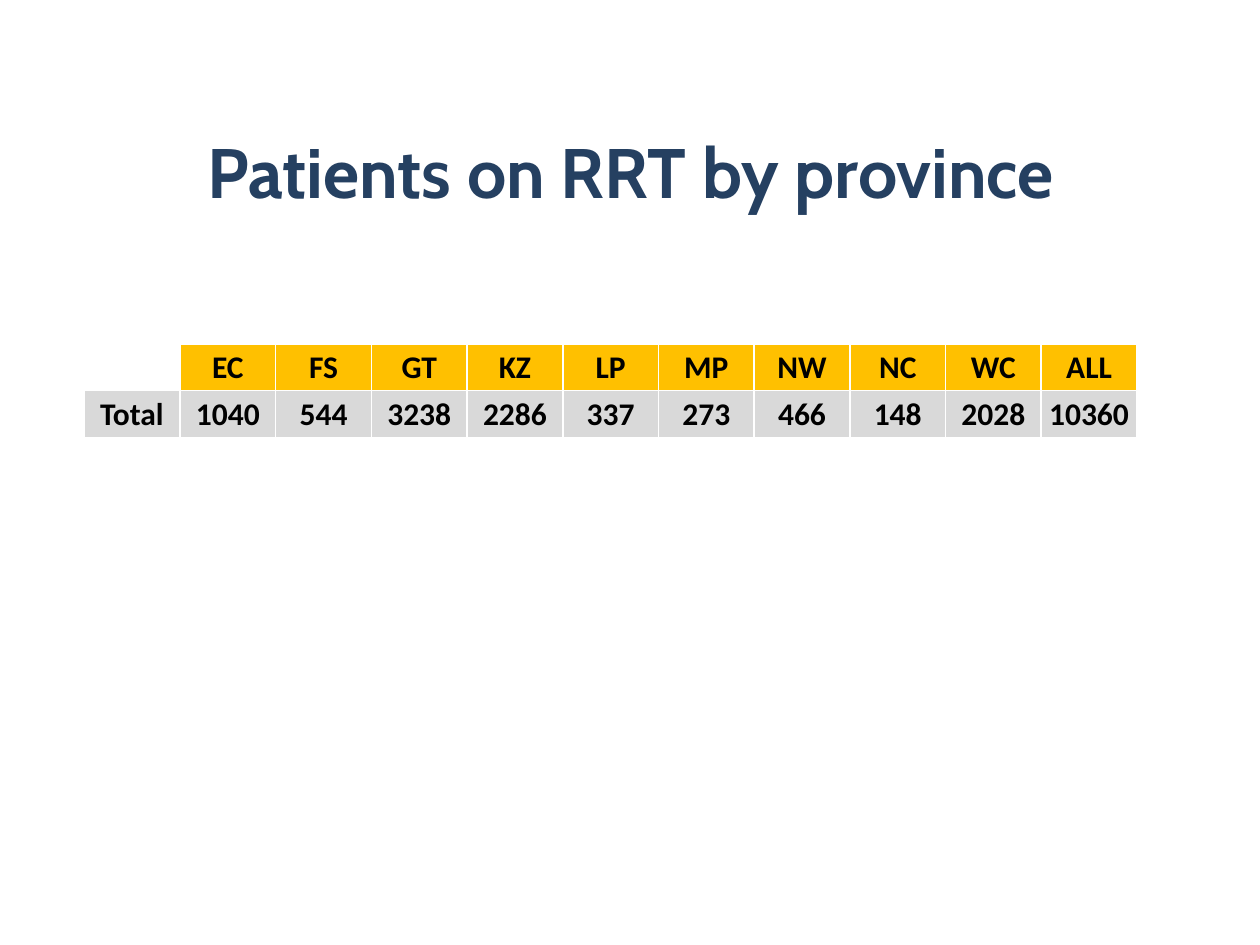
from dataclasses import dataclass

from lxml import etree
from pptx import Presentation
from pptx.dml.color import RGBColor
from pptx.enum import text as t
from pptx.oxml import ns
from pptx.util import Pt


@dataclass(frozen=True)
class Theme:
    navy: str = "254061"
    black: str = "000000"
    white: str = "FFFFFF"
    gold: str = "FFC000"
    grey: str = "D9D9D9"
    head: str = "Cabin"
    body: str = "Calibri"
    big: int = 40
    small: int = 18


THEME = Theme()
HEADS = ["", "EC", "FS", "GT", "KZ", "LP", "MP", "NW", "NC", "WC", "ALL"]
TOTALS = ["Total", "1040", "544", "3238", "2286", "337", "273", "466",
          "148", "2028", "10360"]


def write(frame, words, *, font, size, color, align=t.PP_ALIGN.CENTER):
    para = frame.paragraphs[0]
    para.alignment = align
    run = para.add_run()
    run.text = words
    run.font.name = font
    run.font.size = Pt(size)
    run.font.bold = True
    run.font.color.rgb = RGBColor.from_string(color)


def add_title(slide, words):
    title = slide.shapes.title
    title.left, title.top = Pt(36.5), Pt(60.5)
    title.width, title.height = Pt(648), Pt(73.5)
    title.text_frame.vertical_anchor = t.MSO_ANCHOR.MIDDLE
    write(title.text_frame, words, font=THEME.head, size=THEME.big,
          color=THEME.navy)


def add_rules(cell, color, width):
    """Draw a solid line on each side of a cell; call before setting its fill."""
    props = cell._tc.get_or_add_tcPr()
    for side in ("lnL", "lnR", "lnT", "lnB"):
        line = etree.SubElement(props, ns.qn(f"a:{side}"), w=str(Pt(width)))
        fill = etree.SubElement(line, ns.qn("a:solidFill"))
        etree.SubElement(fill, ns.qn("a:srgbClr"), val=color)


def set_cell(cell, words, fill, align, inset):
    cell.margin_left = Pt(inset)
    cell.margin_right = cell.margin_top = Pt(0.75)
    cell.margin_bottom = Pt(0)
    cell.vertical_anchor = t.MSO_ANCHOR.MIDDLE
    add_rules(cell, THEME.white, 1)
    if not words:
        cell.fill.background()
        return
    cell.fill.solid()
    cell.fill.fore_color.rgb = RGBColor.from_string(fill)
    write(cell.text_frame, words, font=THEME.body, size=THEME.small,
          color=THEME.black, align=align)


def add_grid(slide, rows, fills):
    count, wide, high = len(rows[0]), 54.7, 26.8
    table = slide.shapes.add_table(
        len(rows), count, Pt(48.2), Pt(196.5),
        Pt(wide * count), Pt(high * len(rows))).table
    for col in table.columns:
        col.width = Pt(wide)
    for r, (row, fill) in enumerate(zip(rows, fills)):
        table.rows[r].height = Pt(high)
        for c, words in enumerate(row):
            align, inset = ((t.PP_ALIGN.CENTER, 0.75) if c
                            else (t.PP_ALIGN.LEFT, 9))
            set_cell(table.cell(r, c), words, fill, align, inset)


def main():
    deck = Presentation()
    deck.slide_width, deck.slide_height = Pt(720), Pt(540)
    slide = deck.slides.add_slide(deck.slide_layouts[5])
    add_title(slide, "Patients on RRT by province")
    add_grid(slide, [HEADS, TOTALS], [THEME.gold, THEME.grey])
    deck.save("out.pptx")


if __name__ == "__main__":
    main()
